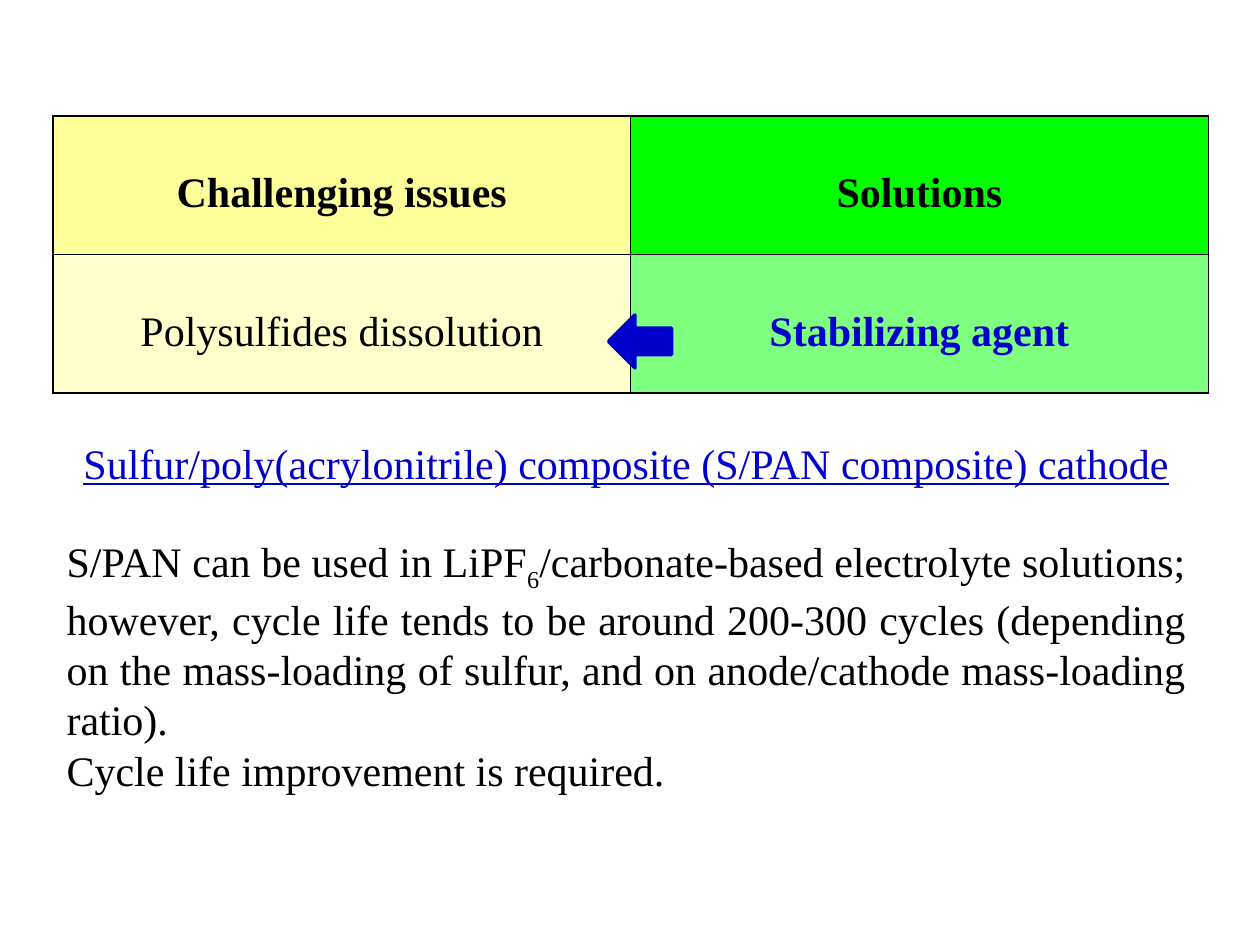
from lxml import etree
from pptx import Presentation
from pptx.dml.color import RGBColor
from pptx.enum.shapes import MSO_SHAPE
from pptx.enum.text import MSO_ANCHOR, MSO_AUTO_SIZE, PP_ALIGN
from pptx.oxml.ns import qn
from pptx.util import Inches, Pt

CENTER, JUSTIFY = PP_ALIGN.CENTER, PP_ALIGN.JUSTIFY
TOP = MSO_ANCHOR.TOP
GROW = MSO_AUTO_SIZE.SHAPE_TO_FIT_TEXT
LEFT_ARROW = MSO_SHAPE.LEFT_ARROW
BLANK_LAYOUT = 6

THEME = {
    "font": "Times New Roman",
    "size": 24,
    "line_gap": 27.6,
    "black": "000000",
    "blue": "0000CC",
    "yellow": "FFFF99",
    "green": "00FF00",
}

# Content: (text, colour, bold) per cell
CELLS = [
    [("Challenging issues", "black", True), ("Solutions", "black", True)],
    [("Polysulfides dissolution", "black", False), ("Stabilizing agent", "blue", True)],
]
COLUMN_FILLS = ["yellow", "green"]
ROW_OPACITY = [100, 50]

# Content: alignment, colour, underline, gap above in lines, (text, baseline) runs
PARAGRAPHS = [
    (CENTER, "blue", True, 0,
     [("Sulfur/poly(acrylonitrile) composite (S/PAN composite) cathode", 0)]),
    (JUSTIFY, "black", False, 1,
     [("S/PAN can be used in LiPF", 0), ("6", -25),
      ("/carbonate-based electrolyte solutions; however, cycle life tends to be "
       "around 200-300 cycles (depending on the mass-loading of sulfur, and on "
       "anode/cathode mass-loading ratio).", 0)]),
    (JUSTIFY, "black", False, 0, [("Cycle life improvement is required.", 0)]),
]


def color(name):
    return RGBColor.from_string(THEME[name])


def style(para, color_name, align):
    para.alignment = align
    para.font.name = THEME["font"]
    para.font.size = Pt(THEME["size"])
    para.font.color.rgb = color(color_name)


def fill_cell(cell, color_name, opacity):
    cell.fill.solid()
    cell.fill.fore_color.rgb = color(color_name)
    properties = cell._tc.get_or_add_tcPr()
    if opacity < 100:
        fill_color = properties.find(".//" + qn("a:srgbClr"))
        etree.SubElement(fill_color, qn("a:alpha"), val=str(opacity * 1000))
    # Borders come before the fill
    for index, side in enumerate(("lnL", "lnR", "lnT", "lnB")):
        border = etree.Element(qn("a:" + side), w=str(Pt(1)))
        solid = etree.SubElement(border, qn("a:solidFill"))
        etree.SubElement(solid, qn("a:srgbClr"), val=THEME["black"])
        properties.insert(index, border)


def add_issue_table(slide):
    frame = slide.shapes.add_table(len(CELLS), len(COLUMN_FILLS), Inches(0.42),
                                   Inches(0.92), Inches(9.17), Inches(2.2))
    table = frame.table
    table.first_row = table.horz_banding = False
    for row, contents in enumerate(CELLS):
        for column, (text, color_name, bold) in enumerate(contents):
            cell = table.cell(row, column)
            cell.vertical_anchor = TOP
            cell.margin_top = Inches(0.43)
            para = cell.text_frame.paragraphs[0]
            para.text = text
            style(para, color_name, CENTER)
            para.font.bold = bold
            fill_cell(cell, COLUMN_FILLS[column], ROW_OPACITY[row])


def add_description(slide):
    box = slide.shapes.add_textbox(Inches(0.43), Inches(3.42), Inches(9.08), Inches(2.93))
    frame = box.text_frame
    frame.word_wrap = True
    frame.auto_size = GROW
    for index, (align, color_name, underline, gap, spans) in enumerate(PARAGRAPHS):
        para = frame.add_paragraph() if index else frame.paragraphs[0]
        style(para, color_name, align)
        para.font.underline = underline
        para.space_before = Pt(gap * THEME["line_gap"])
        for text, baseline in spans:
            span = para.add_run()
            span.text = text
            if baseline:
                span._r.get_or_add_rPr().set("baseline", str(baseline * 1000))


def add_arrow(slide):
    arrow = slide.shapes.add_shape(LEFT_ARROW, Inches(4.83), Inches(2.5),
                                   Inches(0.5), Inches(0.42))
    arrow.shadow.inherit = False
    arrow.fill.solid()
    arrow.fill.fore_color.rgb = color("blue")
    arrow.line.color.rgb = color("blue")
    arrow.line.width = Pt(2)


def main():
    deck = Presentation()
    deck.slide_width, deck.slide_height = Inches(10), Inches(7.5)
    slide = deck.slides.add_slide(deck.slide_layouts[BLANK_LAYOUT])
    add_issue_table(slide)
    add_description(slide)
    add_arrow(slide)
    deck.save("out.pptx")


if __name__ == "__main__":
    main()
